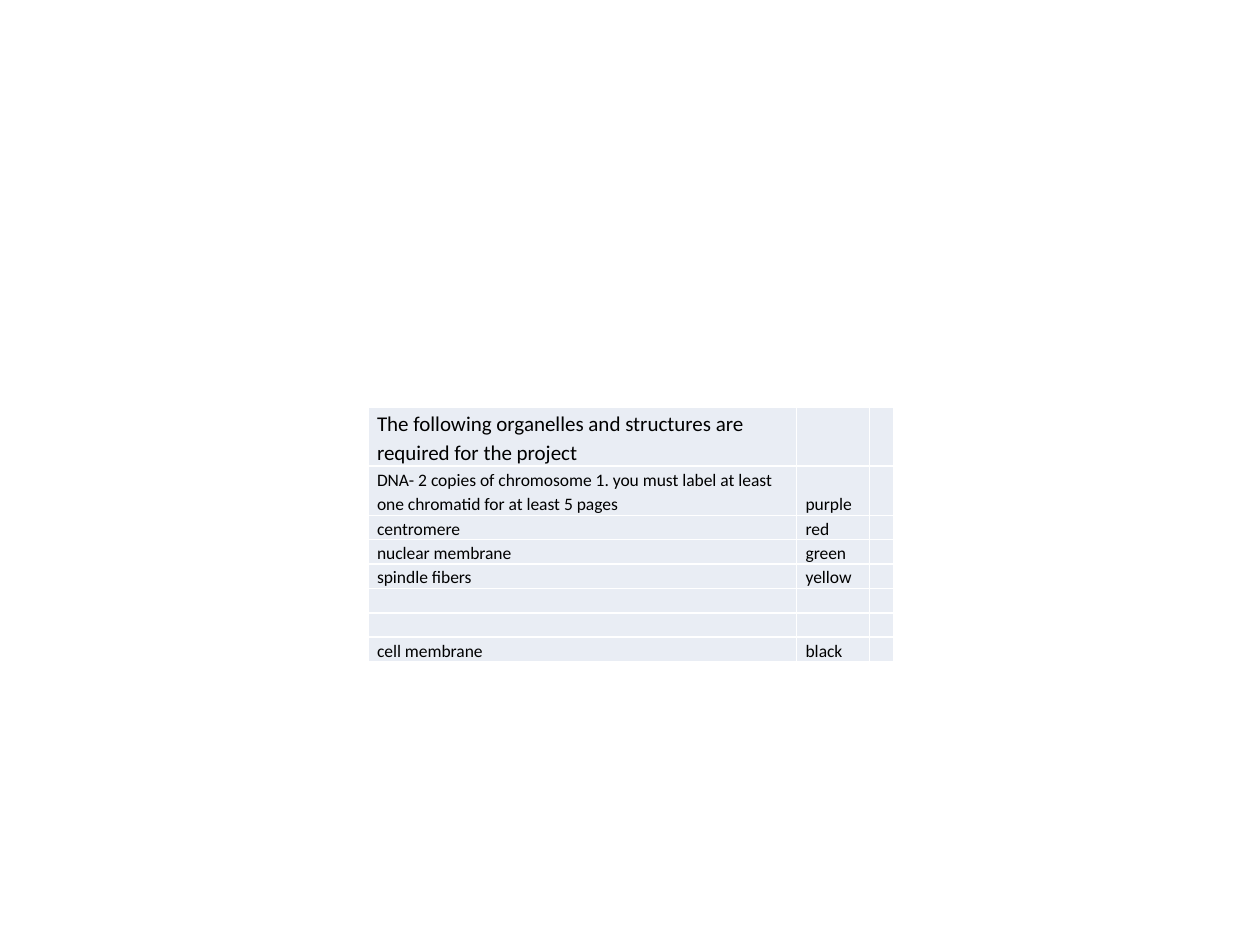
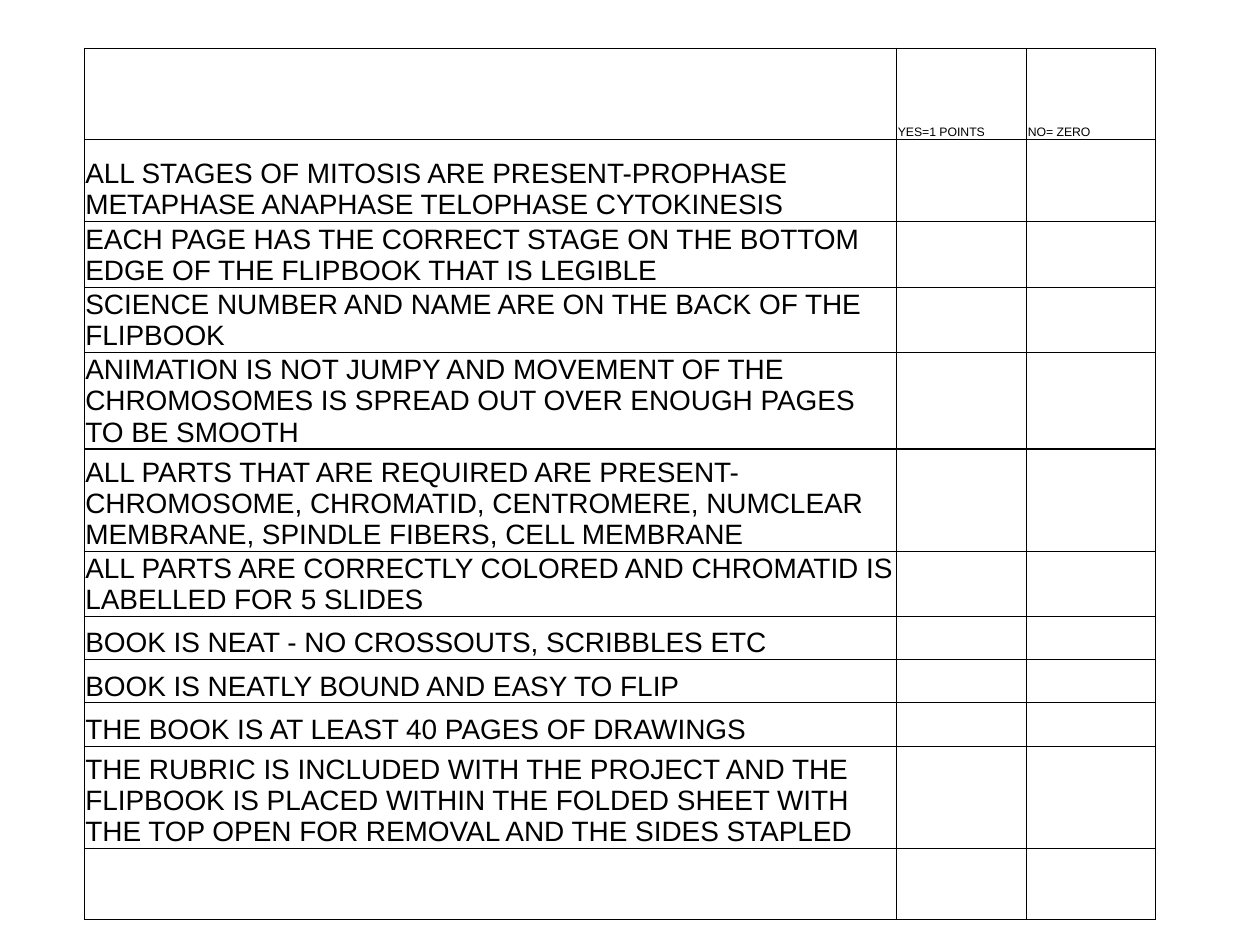
from dataclasses import dataclass
from lxml.etree import SubElement
from pptx import Presentation
from pptx.dml.color import RGBColor
from pptx.enum.text import MSO_ANCHOR
from pptx.oxml.ns import qn
from pptx.util import Cm, Pt


@dataclass(frozen=True)
class Theme:
    text: str = "000000"
    paper: str = "FFFFFF"
    tint: str = "E9EDF4"
    organelle_font: str = "Calibri"
    rubric_font: str = "Arial"
    heading_size: int = 12
    organelle_size: int = 10
    score_size: int = 7
    criterion_size: int = 16


THEME = Theme()

ORGANELLES = [
    (1.15, "The following organelles and structures are required for the project", ""),
    (0.99, "DNA- 2 copies of chromosome 1. you must label at least one chromatid "
           "for at least 5 pages", "purple"),
    (0.49, "centromere", "red"),
    (0.49, "nuclear membrane", "green"),
    (0.49, "spindle fibers", "yellow"),
    (0.49, "", ""),
    (0.49, "", ""),
    (0.49, "cell membrane", "black"),
]

RUBRIC = [
    (1.85, "", "YES=1 POINTS", "NO= ZERO"),
    (1.65, "ALL STAGES OF MITOSIS ARE PRESENT-PROPHASE METAPHASE ANAPHASE "
           "TELOPHASE CYTOKINESIS"),
    (1.32, "EACH PAGE HAS THE CORRECT STAGE ON THE BOTTOM EDGE OF THE FLIPBOOK "
           "THAT IS LEGIBLE"),
    (1.32, "SCIENCE NUMBER AND NAME ARE ON THE BACK OF THE FLIPBOOK"),
    (1.94, "ANIMATION IS NOT JUMPY AND MOVEMENT OF THE CHROMOSOMES IS SPREAD OUT "
           "OVER ENOUGH PAGES TO BE SMOOTH"),
    (2.06, "ALL PARTS THAT ARE REQUIRED ARE PRESENT- CHROMOSOME, CHROMATID, "
           "CENTROMERE, NUMCLEAR MEMBRANE, SPINDLE FIBERS, CELL MEMBRANE"),
    (1.32, "ALL PARTS ARE CORRECTLY COLORED AND CHROMATID IS LABELLED FOR 5 SLIDES"),
    (0.87, "BOOK IS NEAT - NO CROSSOUTS, SCRIBBLES ETC"),
    (0.87, "BOOK IS NEATLY BOUND AND EASY TO FLIP"),
    (0.87, "THE BOOK IS AT LEAST 40 PAGES OF DRAWINGS"),
    (2.06, "THE RUBRIC IS INCLUDED WITH THE PROJECT AND THE FLIPBOOK IS PLACED "
           "WITHIN THE FOLDED SHEET WITH THE TOP OPEN FOR REMOVAL AND THE SIDES STAPLED"),
    (1.43, ""),
]

ORGANELLE_STYLE = dict(font=THEME.organelle_font,
                       sizes=(THEME.heading_size, THEME.organelle_size),
                       margins=(0.18, 0), spacing=1.15, fill=THEME.tint,
                       border=(THEME.paper, 1))
RUBRIC_STYLE = dict(font=THEME.rubric_font,
                    sizes=(THEME.score_size, THEME.criterion_size),
                    margins=(0.02, 0.02), spacing=1.0, fill=None,
                    border=(THEME.text, 0.75))


def set_borders(cell, color, width):
    tcPr = cell._tc.get_or_add_tcPr()
    for side in ("lnL", "lnR", "lnT", "lnB"):
        ln = SubElement(tcPr, qn(f"a:{side}"), w=str(Pt(width)))
        SubElement(SubElement(ln, qn("a:solidFill")), qn("a:srgbClr"), val=color)


def set_cell(cell, text, *, font, size, margins, spacing, fill, border):
    cell.margin_left = cell.margin_right = Cm(margins[0])
    cell.margin_top = cell.margin_bottom = Cm(margins[1])
    cell.vertical_anchor = MSO_ANCHOR.BOTTOM
    set_borders(cell, *border)
    if fill:
        cell.fill.solid()
        cell.fill.fore_color.rgb = RGBColor.from_string(fill)
    else:
        cell.fill.background()
    p = cell.text_frame.paragraphs[0]
    p.line_spacing = spacing
    if text:
        r = p.add_run()
        r.text = text
        r.font.name = font
        r.font.size = Pt(size)
        r.font.color.rgb = RGBColor.from_string(THEME.text)
    else:
        end = SubElement(p._p, qn("a:endParaRPr"), sz=str(size * 100))
        SubElement(end, qn("a:latin"), typeface=font)


def add_grid(s, rows, *, left, top, widths, sizes, **style):
    heights = [row[0] for row in rows]
    frame = s.shapes.add_table(len(rows), len(widths), Cm(left), Cm(top),
                               Cm(sum(widths)), Cm(sum(heights)))
    table = frame.table
    table.first_row = table.horz_banding = False
    for col, width in zip(table.columns, widths):
        col.width = Cm(width)
    for i, (height, *texts) in enumerate(rows):
        table.rows[i].height = Cm(height)
        texts += [""] * (len(widths) - len(texts))
        for j, text in enumerate(texts):
            size = sizes[0] if i == 0 and text else sizes[1]
            set_cell(table.cell(i, j), text, size=size, **style)


def main():
    prs = Presentation()
    prs.slide_width, prs.slide_height = Cm(25.4), Cm(19.05)
    blank = prs.slide_layouts[6]
    add_grid(prs.slides.add_slide(blank), ORGANELLES, left=7.42, top=8.21,
             widths=(8.64, 1.47, 0.48), **ORGANELLE_STYLE)
    add_grid(prs.slides.add_slide(blank), RUBRIC, left=1.7, top=0.97,
             widths=(16.38, 2.62, 2.59), **RUBRIC_STYLE)
    prs.save("out.pptx")


if __name__ == "__main__":
    main()
